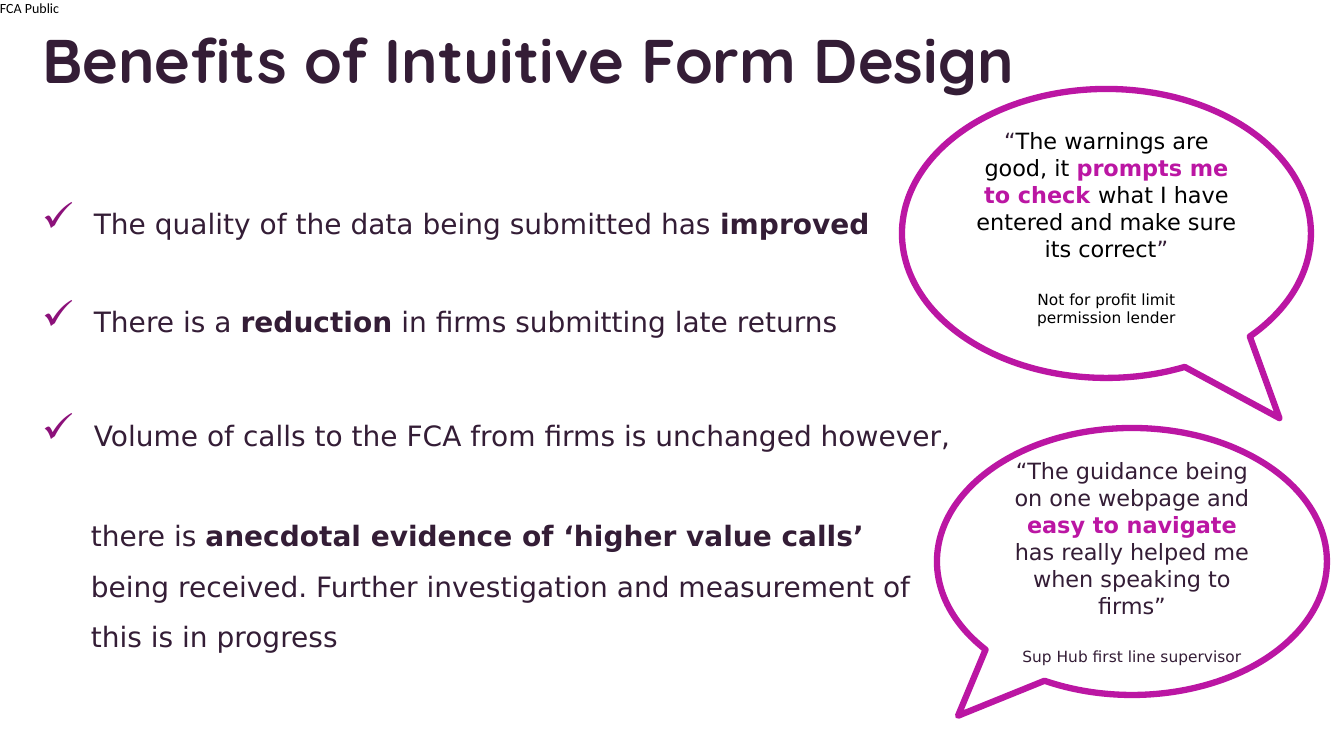
from dataclasses import dataclass

import pptx
import pptx.dml.color
import pptx.enum.shapes
import pptx.enum.text
import pptx.oxml
import pptx.oxml.ns
import pptx.util


@dataclass(frozen=True)
class Theme:
    ink: str = "341D36"
    black: str = "000000"
    white: str = "FFFFFF"
    accent: str = "BB16A3"
    tick: str = "8C117A"
    heading_font: str = "Quicksand"
    body_font: str = "DejaVu Sans"
    label_font: str = "Calibri"
    title_size: int = 44
    body_size: int = 20
    quote_size: int = 16
    source_size: int = 11
    label_size: int = 10
    body_line: int = 36
    source_gap: int = 20
    outline: float = 4.5


THEME = Theme()
SLIDE_SIZE = (1344, 756)
PX = 914400 / 100.8

LABEL = ("FCA Public", (0, 0, 63, 17))
TITLE = ("Benefits of Intuitive Form Design", (32, 0, 1032, 117))
BODY_BOX = (32, 185, 939, 567)
TICK_INDENT = 52
PLAIN_INDENT = 49

# The tuples hold text, bold flag
BENEFITS = [
    {"runs": [("The quality of the data being submitted has ", False), ("improved", True)],
     "gap": 0, "tick": True},
    {"runs": [("There is a ", False), ("reduction", True),
              (" in firms submitting late returns", False)],
     "gap": 34, "tick": True},
    {"runs": [("Volume of calls to the FCA from firms is unchanged however,", False)],
     "gap": 45, "tick": True},
    {"runs": [("there is ", False), ("anecdotal evidence of ‘higher value calls’", True),
              ("\vbeing received. Further investigation and measurement of"
               "\vthis is in progress", False)],
     "gap": 36, "tick": False},
]

CALLOUTS = [
    {"box": (902, 89, 409, 289), "tail": (0.423, 0.639), "bottom": 18, "color": THEME.black,
     "quote": [("“", THEME.ink), ("The warnings are good, it ", THEME.black),
               ("prompts me to check ", THEME.accent),
               ("what I have entered and make sure its correct", THEME.black),
               ("”", THEME.ink)],
     "source": "Not for profit limit\vpermission lender"},
    {"box": (937, 428, 390, 267), "tail": (-0.446, 0.578), "bottom": 5, "color": THEME.ink,
     "quote": [("“The guidance being on one webpage and ", THEME.ink),
               ("easy to navigate ", THEME.accent),
               ("has really helped me when speaking to firms”", THEME.ink)],
     "source": "Sup Hub first line supervisor"},
]


def px(length):
    return pptx.util.Emu(round(length * PX))


def place(box):
    return [px(length) for length in box]


def rgb(color):
    return pptx.dml.color.RGBColor.from_string(color)


def write(paragraph, text, *, size, color=THEME.ink, bold=False, font=THEME.body_font):
    for index, line in enumerate(text.split("\v")):
        if index:
            paragraph.add_line_break()
        if line:
            run = paragraph.add_run()
            run.text = line
            run.font.name = font
            run.font.size = pptx.util.Pt(size)
            run.font.bold = bold
            run.font.color.rgb = rgb(color)


def set_indent(paragraph, margin, tick):
    properties = paragraph._p.get_or_add_pPr()
    properties.set("marL", str(px(margin)))
    properties.set("indent", str(-px(margin) if tick else 0))
    if tick:
        namespace = pptx.oxml.ns.nsdecls("a")
        for markup in (f'<a:buClr {namespace}><a:srgbClr val="{THEME.tick}"/></a:buClr>',
                       f'<a:buSzPct {namespace} val="145000"/>',
                       f'<a:buChar {namespace} char="✓"/>'):
            properties.append(pptx.oxml.parse_xml(markup))


def add_label(slide):
    text, box = LABEL
    frame = slide.shapes.add_textbox(*place(box)).text_frame
    frame.margin_left = frame.margin_right = frame.margin_top = frame.margin_bottom = 0
    frame.word_wrap = False
    write(frame.paragraphs[0], text, size=THEME.label_size, color=THEME.black,
          font=THEME.label_font)


def set_title(slide):
    text, box = TITLE
    title = slide.shapes.title
    title.left, title.top, title.width, title.height = place(box)
    frame = title.text_frame
    frame.auto_size = pptx.enum.text.MSO_AUTO_SIZE.NONE
    frame.vertical_anchor = pptx.enum.text.MSO_ANCHOR.MIDDLE
    frame.paragraphs[0].alignment = pptx.enum.text.PP_ALIGN.LEFT
    write(frame.paragraphs[0], text, size=THEME.title_size, bold=True,
          font=THEME.heading_font)


def add_benefits(slide):
    frame = slide.shapes.add_textbox(*place(BODY_BOX)).text_frame
    frame.word_wrap = True
    for index, benefit in enumerate(BENEFITS):
        paragraph = frame.add_paragraph() if index else frame.paragraphs[0]
        paragraph.line_spacing = pptx.util.Pt(THEME.body_line)
        paragraph.space_before = pptx.util.Pt(benefit["gap"])
        margin = TICK_INDENT if benefit["tick"] else PLAIN_INDENT
        set_indent(paragraph, margin, benefit["tick"])
        for text, bold in benefit["runs"]:
            write(paragraph, text, size=THEME.body_size, bold=bold)


def add_callout(slide, callout):
    shape = slide.shapes.add_shape(
        pptx.enum.shapes.MSO_SHAPE.OVAL_CALLOUT, *place(callout["box"]))
    for index, offset in enumerate(callout["tail"]):
        shape.adjustments[index] = offset
    shape.shadow.inherit = False
    shape.fill.solid()
    shape.fill.fore_color.rgb = rgb(THEME.white)
    shape.line.color.rgb = rgb(THEME.accent)
    shape.line.width = pptx.util.Pt(THEME.outline)
    frame = shape.text_frame
    frame.word_wrap = True
    frame.vertical_anchor = pptx.enum.text.MSO_ANCHOR.MIDDLE
    frame.margin_bottom = px(callout["bottom"])
    quote, source = frame.paragraphs[0], frame.add_paragraph()
    quote.alignment = source.alignment = pptx.enum.text.PP_ALIGN.CENTER
    for text, color in callout["quote"]:
        write(quote, text, size=THEME.quote_size, color=color, bold=color == THEME.accent)
    source.space_before = pptx.util.Pt(THEME.source_gap)
    write(source, callout["source"], size=THEME.source_size, color=callout["color"])


def main():
    presentation = pptx.Presentation()
    presentation.slide_width, presentation.slide_height = place(SLIDE_SIZE)
    slide = presentation.slides.add_slide(presentation.slide_layouts.get_by_name("Title Only"))
    add_label(slide)
    add_benefits(slide)
    set_title(slide)
    for callout in CALLOUTS:
        add_callout(slide, callout)
    presentation.save("out.pptx")


if __name__ == "__main__":
    main()
